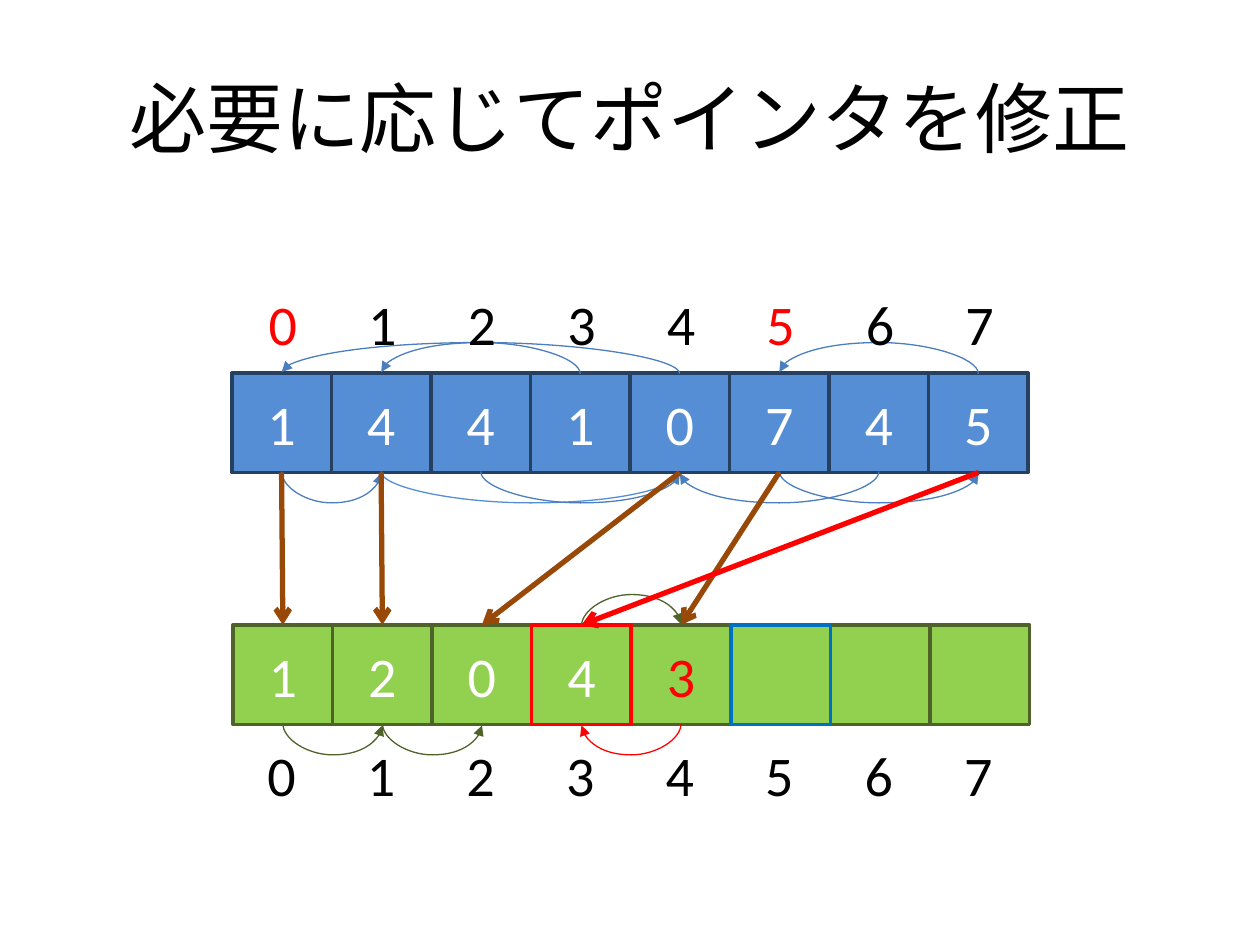
import dataclasses

import pptx
import pptx.dml.color
import pptx.enum.shapes
import pptx.enum.text
import pptx.oxml.ns
import pptx.util
from lxml import etree

Inches = pptx.util.Inches
Pt = pptx.util.Pt
BOTTOM, TOP = 2, 0


@dataclasses.dataclass(frozen=True)
class Theme:
    """Colours, type sizes and line widths of the slide."""
    font: str = "Calibri"
    title_size: int = 44
    cell_size: int = 32
    black: str = "000000"
    white: str = "FFFFFF"
    red: str = "FF0000"
    blue: str = "558ED5"
    blue_edge: str = "254061"
    blue_link: str = "4B7EBC"
    green: str = "92D050"
    green_edge: str = "4F6228"
    marked_edge: str = "0070C0"
    brown: str = "984807"
    edge_width: float = 2
    link_width: float = 0.75
    arrow_width: float = 3


THEME = Theme()


def rgb(code):
    """Return the colour for a hexadecimal code."""
    return pptx.dml.color.RGBColor.from_string(code)


def write(box, text, size, color):
    """Write one centred line in the middle of a box."""
    frame = box.text_frame
    frame.word_wrap = True
    frame.vertical_anchor = pptx.enum.text.MSO_ANCHOR.MIDDLE
    para = frame.paragraphs[0]
    para.alignment = pptx.enum.text.PP_ALIGN.CENTER
    span = para.add_run()
    span.text = text
    span.font.name = THEME.font
    span.font.size = Pt(size)
    span.font.color.rgb = rgb(color)


def add_title(page, left, top, width, height, text):
    """Place the slide title in its box."""
    box = page.shapes.add_textbox(left, top, width, height)
    write(box, text, THEME.title_size, THEME.black)


def add_indices(page, left, top, size, count, marked=()):
    """Place a row of index numbers, the marked ones in red."""
    for index in range(count):
        box = page.shapes.add_textbox(left + index * size, top, size, size)
        color = THEME.red if index in marked else THEME.black
        write(box, str(index), THEME.cell_size, color)


def add_cells(page, left, top, size, values, fill, edge, edges=None, inks=None):
    """Place a row of array cells, those with their own edge in front."""
    edges, inks = edges or {}, inks or {}
    cells = {}
    for index in sorted(range(len(values)), key=lambda index: index in edges):
        cell = page.shapes.add_shape(
            pptx.enum.shapes.MSO_SHAPE.RECTANGLE,
            left + index * size, top, size, size)
        cell.shadow.inherit = False
        cell.fill.solid()
        cell.fill.fore_color.rgb = rgb(fill)
        cell.line.color.rgb = rgb(edges.get(index, edge))
        cell.line.width = Pt(THEME.edge_width)
        if values[index]:
            write(cell, values[index], THEME.cell_size, inks.get(index, THEME.white))
        cells[index] = cell
    return cells


def join(page, kind, source, source_side, target, target_side, color, width, head):
    """Join two cells with an arrow."""
    arrow = page.shapes.add_connector(kind, 0, 0, 0, 0)
    arrow.begin_connect(source, source_side)
    arrow.end_connect(target, target_side)
    arrow.line.color.rgb = rgb(color)
    arrow.line.width = Pt(width)
    name = pptx.oxml.ns.qn
    etree.SubElement(arrow.line._get_or_add_ln(), name("a:tailEnd"), type=head)
    etree.SubElement(arrow._element.spPr, name("a:effectLst"))
    return arrow


def add_link(page, source, target, side, color):
    """Curve a pointer between two cells of one row, above or below it."""
    link = join(page, pptx.enum.shapes.MSO_CONNECTOR.CURVE, source, side,
                target, side, color, THEME.link_width, "triangle")
    thickness, bulge = Pt(1), Inches(0.25)
    reach = abs(target.left - source.left)
    middle = (source.left + target.left + source.width) // 2
    edge = source.top + (source.height if side == BOTTOM else 0)
    link.left, link.top = middle - thickness // 2, edge - reach // 2
    link.width, link.height = thickness, reach
    forward = target.left > source.left
    turned = forward == (side == BOTTOM)
    frame = link._element.spPr.xfrm
    frame.set("rot", str((270 if turned else 90) * 60000))
    frame.set("flipH", str(int(forward)))
    frame.set("flipV", str(int(side == TOP)))
    name = pptx.oxml.ns.qn
    guides = link._element.spPr.find(name("a:prstGeom")).get_or_add_avLst()
    etree.SubElement(guides, name("a:gd"), name="adj1",
                     fmla=f"val {bulge * 100000 // thickness}")


def add_links(page, cells, links):
    """Draw every curved pointer of one row."""
    for start, end, side, color in links:
        add_link(page, cells[start], cells[end], side, color)


def add_moves(page, sources, targets, moves):
    """Draw the straight arrows from the upper row to the lower row."""
    for start, end, color in moves:
        join(page, pptx.enum.shapes.MSO_CONNECTOR.STRAIGHT, sources[start], BOTTOM,
             targets[end], TOP, color, THEME.arrow_width, "arrow")


def add_old_array(page, left, top, size):
    """Place the upper array with its indices and pointers."""
    values = ["1", "4", "4", "1", "0", "7", "4", "5"]
    cells = add_cells(page, left, top, size, values, THEME.blue, THEME.blue_edge)
    backward = {3, 4, 7}
    add_links(page, cells, [
        (index, int(value), TOP if index in backward else BOTTOM,
         THEME.blue if index == 1 else THEME.blue_link)
        for index, value in enumerate(values)])
    add_indices(page, left + Inches(0.01), top - size, size, len(values), marked={0, 5})
    return cells


def add_new_array(page, left, top, size):
    """Place the lower array with its indices and pointers."""
    values = ["1", "2", "0", "4", "3", "", "", ""]
    cells = add_cells(page, left, top, size, values, THEME.green, THEME.green_edge,
                      edges={3: THEME.red, 5: THEME.marked_edge}, inks={4: THEME.red})
    add_links(page, cells, [
        (0, 1, BOTTOM, THEME.green_edge),
        (1, 2, BOTTOM, THEME.green_edge),
        (3, 4, TOP, THEME.green_edge),
        (4, 3, BOTTOM, THEME.red)])
    add_indices(page, left - Inches(0.01), top + size, size, len(values))
    return cells


def main():
    """Build the slide and save it."""
    deck = pptx.Presentation()
    deck.slide_width, deck.slide_height = Inches(10), Inches(7.5)
    page = deck.slides.add_slide(deck.slide_layouts[6])
    add_title(page, Inches(0.5), Inches(0.3), Inches(9), Inches(1.25),
              "必要に応じてポインタを修正")
    size = Inches(0.79)
    old = add_old_array(page, Inches(1.84), Inches(2.96), size)
    new = add_new_array(page, Inches(1.85), Inches(4.96), size)
    add_moves(page, old, new, [
        (0, 0, THEME.brown), (1, 1, THEME.brown), (4, 2, THEME.brown),
        (5, 4, THEME.brown), (7, 3, THEME.red)])
    deck.save("out.pptx")


if __name__ == "__main__":
    main()
